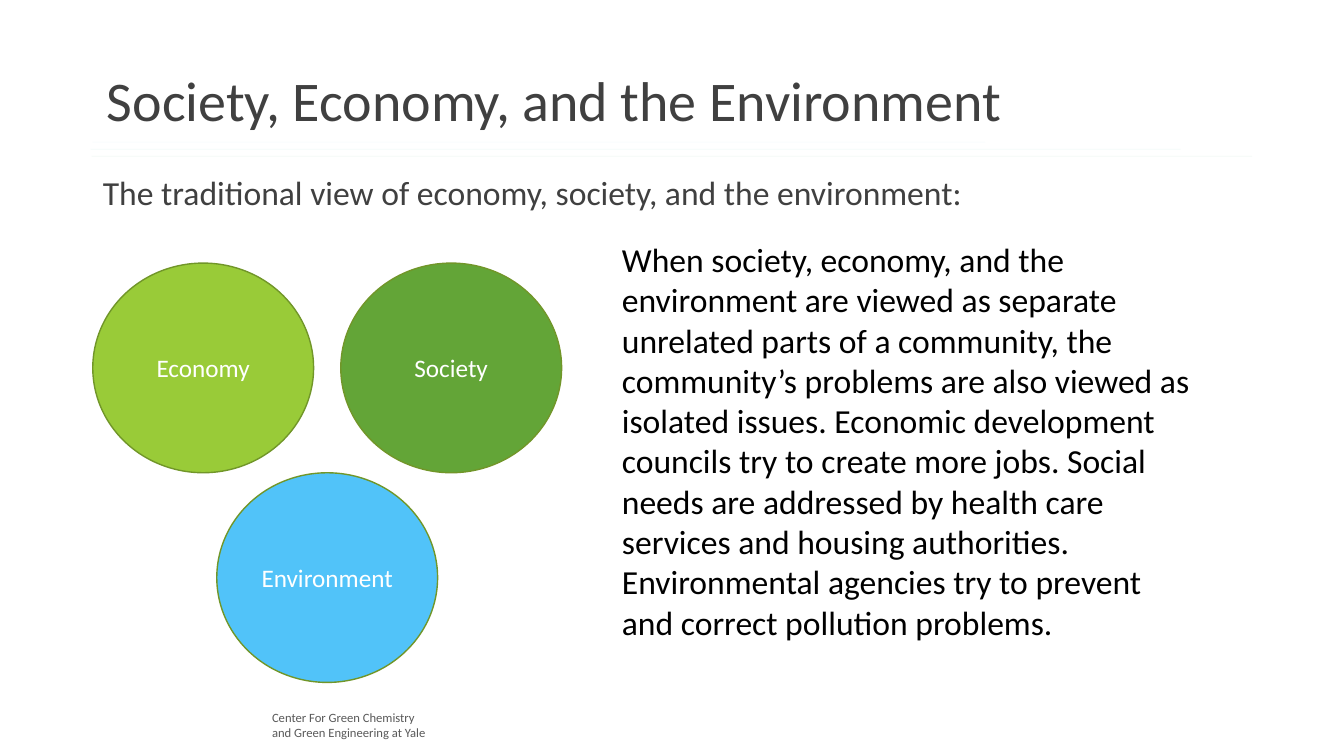
from lxml.etree import SubElement as Sub
from pptx import Presentation
from pptx.dml.color import RGBColor
from pptx.enum.shapes import MSO_CONNECTOR as Link, MSO_SHAPE as Shape
from pptx.enum.text import MSO_ANCHOR as Anchor, PP_ALIGN as Align
from pptx.oxml.ns import qn
from pptx.util import Emu, Pt

PX = 9144


def color(code):
    return RGBColor.from_string(code)


def write(shape, lines, size, code, align=Align.LEFT, anchor=Anchor.TOP, wrap=True):
    frame = shape.text_frame
    frame.word_wrap = wrap
    frame.vertical_anchor = anchor
    for i, line in enumerate(lines):
        para = frame.add_paragraph() if i else frame.paragraphs[0]
        para.alignment = align
        run = para.add_run()
        run.text = line
        run.font.name = "Calibri"
        run.font.size = Pt(size)
        run.font.color.rgb = color(code)


deck = Presentation()
deck.slide_width, deck.slide_height = Emu(1333 * PX), Emu(750 * PX)
slide = deck.slides.add_slide(deck.slide_layouts[5])
shapes = slide.shapes

rules = [(92, 977, 141, "4EB3CF"), (90, 1171, 148, "44C1A3"), (91, 1242, 155, "37A76F")]
for start, end, y, code in rules:
    rule = shapes.add_connector(Link.STRAIGHT, *[Emu(n * PX) for n in (start, y, end, y)])
    rule.line.color.rgb = color(code)
    rule.line.width = Pt(0.5)
    tint = rule.line.fill._xPr.find(".//" + qn("a:srgbClr"))
    Sub(tint, qn("a:alpha"), val="5000")
    Sub(rule._element.spPr, qn("a:effectLst"))

title = shapes.title
title.left, title.top, title.width, title.height = [Emu(n * PX) for n in (92, 170, 1164, 46)]
write(title, ["The traditional view of economy, society, and the environment:"],
      24, "404040", anchor=Anchor.MIDDLE)
title.text_frame.paragraphs[0].line_spacing = 0.9

wide, high = 219, 208
left, top, step = 92, 261, 246
circles = [
    ("Economy", "99CB38", left, top),
    ("Society", "63A537", left + step, top),
    ("Environment", "51C3F9", left + step // 2, top + high),
]
for name, fill, x, y in circles:
    oval = shapes.add_shape(Shape.OVAL, *[Emu(n * PX) for n in (x, y, wide, high)])
    oval.shadow.inherit = False
    oval.fill.solid()
    oval.fill.fore_color.rgb = color(fill)
    oval.line.color.rgb = color("719629")
    oval.line.width = Pt(1)
    write(oval, [name], 18, "FFFFFF", Align.CENTER, Anchor.MIDDLE)

texts = [
    ((607, 232, 584, 414), [
        "When society, economy, and the environment are viewed as separate "
        "unrelated parts of a community, the community’s problems are also "
        "viewed as isolated issues. Economic development councils try to "
        "create more jobs. Social needs are addressed by health care services "
        "and housing authorities. Environmental agencies try to prevent and "
        "correct pollution problems."], 24, "000000", Align.LEFT, True),
    ((80, 60, 939, 77), ["Society, Economy, and the Environment"],
     40, "404040", Align.CENTER, False),
    ((260, 699, 186, 40), ["Center For Green Chemistry", "and Green Engineering at Yale"],
     9, "595959", Align.LEFT, True),
]
for place, lines, size, code, align, wrap in texts:
    box = shapes.add_textbox(*[Emu(n * PX) for n in place])
    write(box, lines, size, code, align, wrap=wrap)

deck.save("out.pptx")
